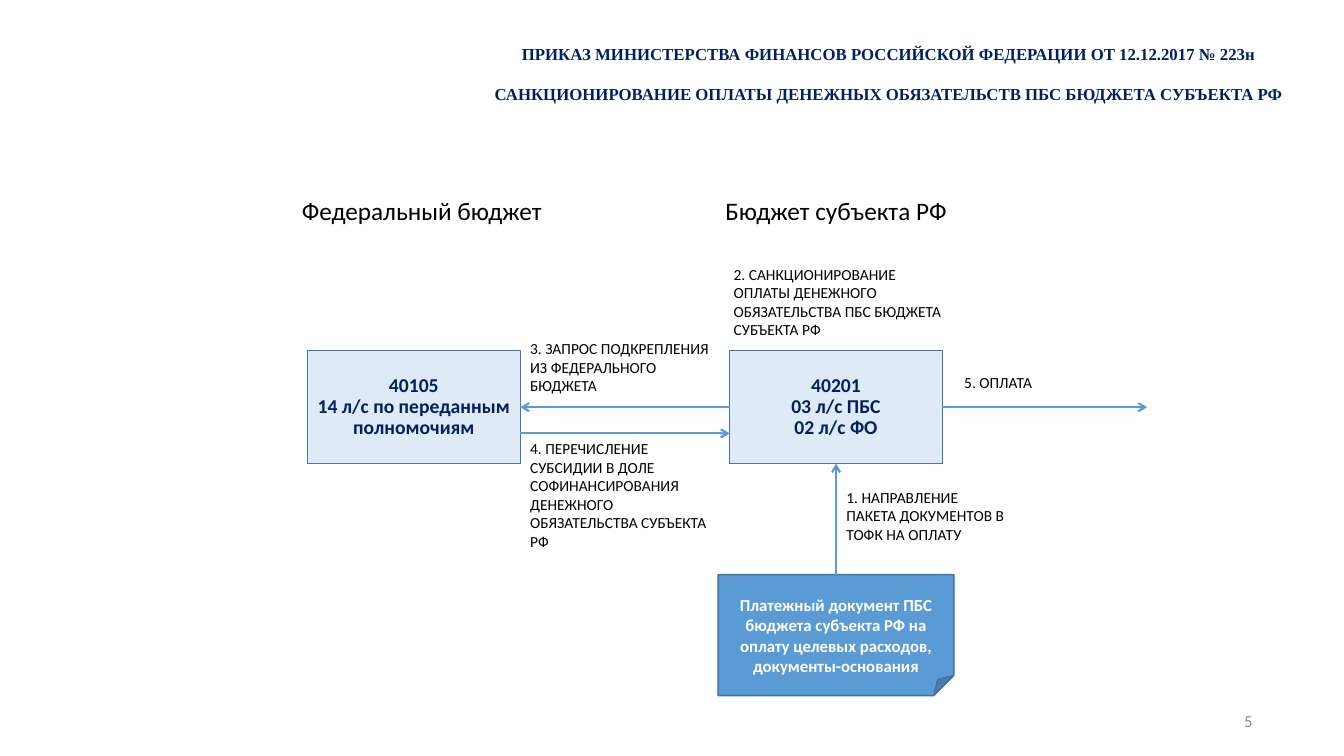
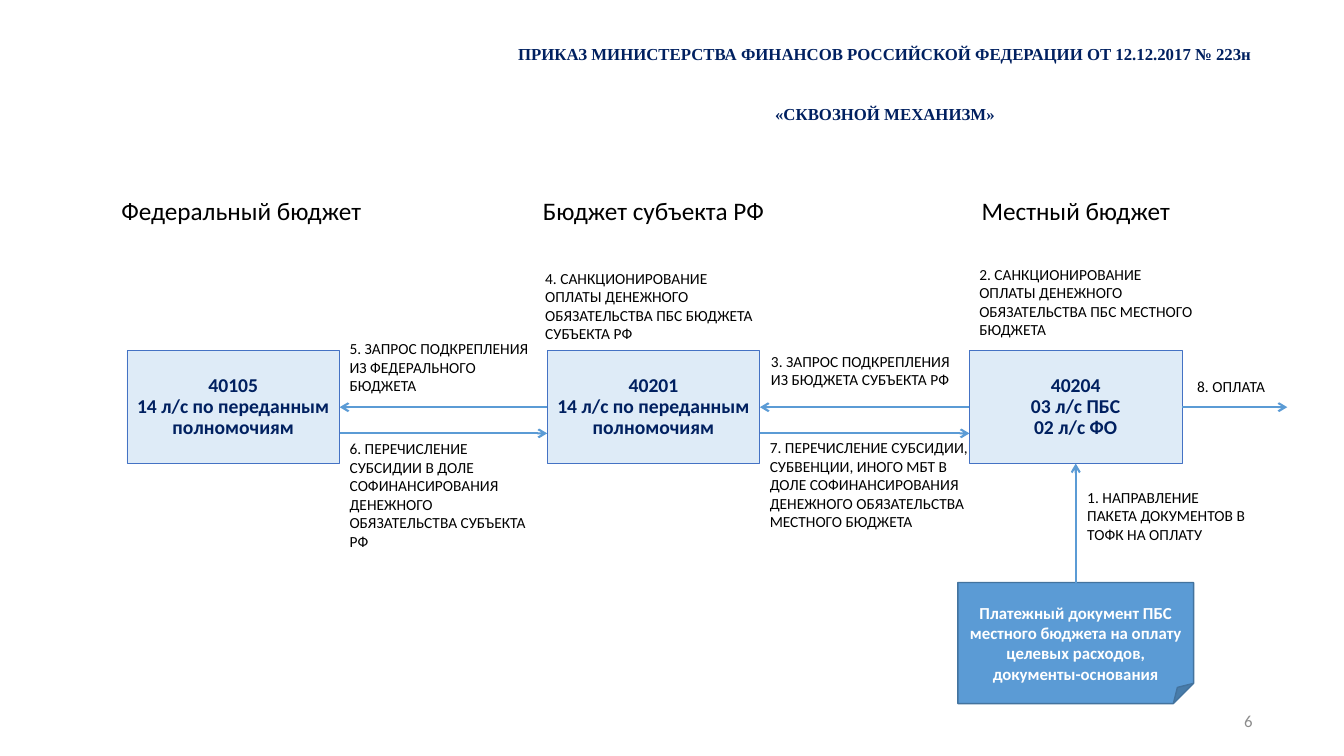
import pptx
import pptx.util
import pptx.dml.color
import pptx.enum.shapes
import pptx.enum.text
import lxml.etree

Cm, Pt = pptx.util.Cm, pptx.util.Pt
RGB = pptx.dml.color.RGBColor.from_string
SHAPE = pptx.enum.shapes.MSO_SHAPE
STRAIGHT = pptx.enum.shapes.MSO_CONNECTOR.STRAIGHT
ANCHOR = pptx.enum.text.MSO_ANCHOR
ALIGN = pptx.enum.text.PP_ALIGN


class Theme:
    navy, black, white, gray = map(RGB, ("002060", "000000", "FFFFFF", "8C8C8C"))
    account_fill, account_line = RGB("DEEBF7"), RGB("4472C4")
    accent, note_line = RGB("5B9BD5"), RGB("43739E")
    body, serif = "Calibri", "Times New Roman"
    title_size, heading_size, account_size = Pt(12), Pt(18), Pt(14)
    label_size, note_size, number_size = Pt(11), Pt(12), Pt(12)


def write(sp, lines, size, color, bold=False, align=ALIGN.CENTER,
          anchor=ANCHOR.TOP, name=Theme.body, spacing=None, gap=0, wrap=True):
    tf = sp.text_frame
    tf.word_wrap = wrap
    tf.vertical_anchor = anchor
    for i, line in enumerate(lines):
        p = tf.add_paragraph() if i else tf.paragraphs[0]
        p.text = line
        p.alignment = align
        if spacing:
            p.line_spacing = spacing
        if i and gap:
            p.space_before = Pt(gap)
        p.font.name, p.font.size, p.font.bold = name, size, bold
        p.font.color.rgb = color


def arrow(s, x1, y1, x2, y2, begin=None, end=None):
    cx = s.shapes.add_connector(STRAIGHT, Cm(x1), Cm(y1), Cm(x2), Cm(y2))
    if begin:
        cx.begin_connect(*begin)
    if end:
        cx.end_connect(*end)
    cx.line.color.rgb = Theme.accent
    cx.line.width = Pt(1.5)
    ns = "{http://schemas.openxmlformats.org/drawingml/2006/main}"
    lxml.etree.SubElement(cx.line._get_or_add_ln(), ns + "tailEnd", type="arrow")
    lxml.etree.SubElement(cx._element.spPr, ns + "effectLst")


BOX_W, BOX_H, BOX_Y = 5.36, 2.84, 8.84
MID_Y, RETURN_Y = BOX_Y + BOX_H / 2, 10.92
NOTE_W, NOTE_H = 5.94, 3.05
HEADING_W = 6.6

ORDER = "ПРИКАЗ МИНИСТЕРСТВА ФИНАНСОВ РОССИЙСКОЙ ФЕДЕРАЦИИ ОТ 12.12.2017 № 223н"
DELEGATED = "14 л/с по переданным полномочиям"
OWN = ["03 л/с ПБС", "02 л/с ФО"]
SEND = "1. НАПРАВЛЕНИЕ ПАКЕТА ДОКУМЕНТОВ В ТОФК НА ОПЛАТУ"
SANCTION = "САНКЦИОНИРОВАНИЕ ОПЛАТЫ ДЕНЕЖНОГО ОБЯЗАТЕЛЬСТВА ПБС"
REQUEST = "ЗАПРОС ПОДКРЕПЛЕНИЯ ИЗ"
SUBSIDY = "ПЕРЕЧИСЛЕНИЕ СУБСИДИИ В ДОЛЕ СОФИНАНСИРОВАНИЯ ДЕНЕЖНОГО ОБЯЗАТЕЛЬСТВА СУБЪЕКТА РФ"

slides = [
    {
        "number": "5",
        "title": [ORDER, "САНКЦИОНИРОВАНИЕ ОПЛАТЫ ДЕНЕЖНЫХ ОБЯЗАТЕЛЬСТВ ПБС БЮДЖЕТА СУБЪЕКТА РФ"],
        "title_x": 11.86, "title_w": 21.08, "title_gap": 14,
        "accounts": [
            (7.75, 0.2, "Федеральный бюджет", ["40105", DELEGATED]),
            (18.39, 0, "Бюджет субъекта РФ", ["40201", *OWN]),
        ],
        "note": "Платежный документ ПБС бюджета субъекта РФ на оплату целевых расходов, документы-основания",
        "note_y": 14.48, "payment_x": 28.91,
        "labels": [
            (21.08, 12.17, 4.52, 1.68, SEND),
            (18.24, 6.55, 5.94, 2.13, f"2. {SANCTION} БЮДЖЕТА СУБЪЕКТА РФ"),
            (13.11, 8.43, 5.26, 1.68, f"3. {REQUEST} ФЕДЕРАЛЬНОГО БЮДЖЕТА"),
            (13.11, 10.95, 5.26, 3.07, f"4. {SUBSIDY}"),
            (24.05, 9.27, 2.39, 0.74, "5. ОПЛАТА"),
        ],
    },
    {
        "number": "6",
        "title": [ORDER, "«СКВОЗНОЙ МЕХАНИЗМ»"],
        "title_x": 12.17, "title_w": 20.27, "title_gap": 28,
        "accounts": [
            (3.2, 0.2, "Федеральный бюджет", ["40105", DELEGATED]),
            (13.79, 0, "Бюджет субъекта РФ", ["40201", DELEGATED]),
            (24.43, 0, "Местный бюджет", ["40204", *OWN]),
        ],
        "note": "Платежный документ ПБС местного бюджета на оплату целевых расходов, документы-основания",
        "note_y": 14.68, "payment_x": 32.44,
        "labels": [
            (27.15, 12.17, 4.52, 1.68, SEND),
            (24.43, 6.55, 5.94, 2.13, f"2. {SANCTION} МЕСТНОГО БЮДЖЕТА"),
            (19.18, 8.74, 5.28, 1.19, f"3. {REQUEST} БЮДЖЕТА СУБЪЕКТА РФ"),
            (13.49, 6.65, 5.94, 2.13, f"4. {SANCTION} БЮДЖЕТА СУБЪЕКТА РФ"),
            (8.56, 8.43, 5.26, 1.68, f"5. {REQUEST} ФЕДЕРАЛЬНОГО БЮДЖЕТА"),
            (8.56, 10.95, 5.26, 3.07, f"6. {SUBSIDY}"),
            (19.15, 10.92, 5.56, 2.62,
             "7. ПЕРЕЧИСЛЕНИЕ СУБСИДИИ, СУБВЕНЦИИ, ИНОГО МБТ В ДОЛЕ СОФИНАНСИРОВАНИЯ "
             "ДЕНЕЖНОГО ОБЯЗАТЕЛЬСТВА МЕСТНОГО БЮДЖЕТА"),
            (29.92, 9.37, 2.39, 0.74, "8. ОПЛАТА"),
        ],
    },
]

prs = pptx.Presentation()
prs.slide_width, prs.slide_height = Cm(33.87), Cm(19.05)

for d in slides:
    s = prs.slides.add_slide(prs.slide_layouts[6])

    sp = s.shapes.add_textbox(Cm(24.2), Cm(17.65), Cm(7.62), Cm(1.02))
    write(sp, [d["number"]], Theme.number_size, Theme.gray, align=ALIGN.RIGHT, anchor=ANCHOR.MIDDLE)

    sp = s.shapes.add_textbox(Cm(d["title_x"]), Cm(0.99), Cm(d["title_w"]), Cm(1.52))
    write(sp, d["title"], Theme.title_size, Theme.navy, bold=True, name=Theme.serif, gap=d["title_gap"])

    boxes = []
    for x, shift, heading, lines in d["accounts"]:
        heading_x = x + (BOX_W - HEADING_W) / 2 + shift
        sp = s.shapes.add_textbox(Cm(heading_x), Cm(4.88), Cm(HEADING_W), Cm(0.94))
        write(sp, [heading], Theme.heading_size, Theme.black, spacing=0.9, wrap=False)

        sp = s.shapes.add_shape(SHAPE.RECTANGLE, Cm(x), Cm(BOX_Y), Cm(BOX_W), Cm(BOX_H))
        sp.shadow.inherit = False
        sp.fill.solid()
        sp.fill.fore_color.rgb = Theme.account_fill
        sp.line.color.rgb = Theme.account_line
        sp.line.width = Pt(0.5)
        tf = sp.text_frame
        tf.margin_left = tf.margin_right = tf.margin_top = tf.margin_bottom = Cm(0.03)
        write(sp, lines, Theme.account_size, Theme.navy, bold=True, anchor=ANCHOR.MIDDLE, spacing=0.9)
        boxes.append((x, sp))

    for (x1, left), (x2, right) in zip(boxes, boxes[1:]):
        arrow(s, x2, MID_Y, x1 + BOX_W, MID_Y, (right, 1), (left, 3))
        arrow(s, x1 + BOX_W, RETURN_Y, x2, RETURN_Y)

    x, payer = boxes[-1]
    center = x + BOX_W / 2
    arrow(s, x + BOX_W, MID_Y, d["payment_x"], MID_Y, (payer, 3))

    sp = s.shapes.add_shape(SHAPE.FOLDED_CORNER, Cm(center - NOTE_W / 2), Cm(d["note_y"]),
                            Cm(NOTE_W), Cm(NOTE_H))
    sp.shadow.inherit = False
    sp.fill.solid()
    sp.fill.fore_color.rgb = Theme.accent
    sp.line.color.rgb = Theme.note_line
    sp.line.width = Pt(1)
    sp.text_frame.margin_top = Cm(0.64)
    write(sp, [d["note"]], Theme.note_size, Theme.white, bold=True, anchor=ANCHOR.MIDDLE)
    arrow(s, center, d["note_y"], center, BOX_Y + BOX_H, (sp, 0), (payer, 2))

    for x, y, w, h, text in d["labels"]:
        sp = s.shapes.add_textbox(Cm(x), Cm(y), Cm(w), Cm(h))
        write(sp, [text], Theme.label_size, Theme.black, align=ALIGN.LEFT)

prs.save("out.pptx")
